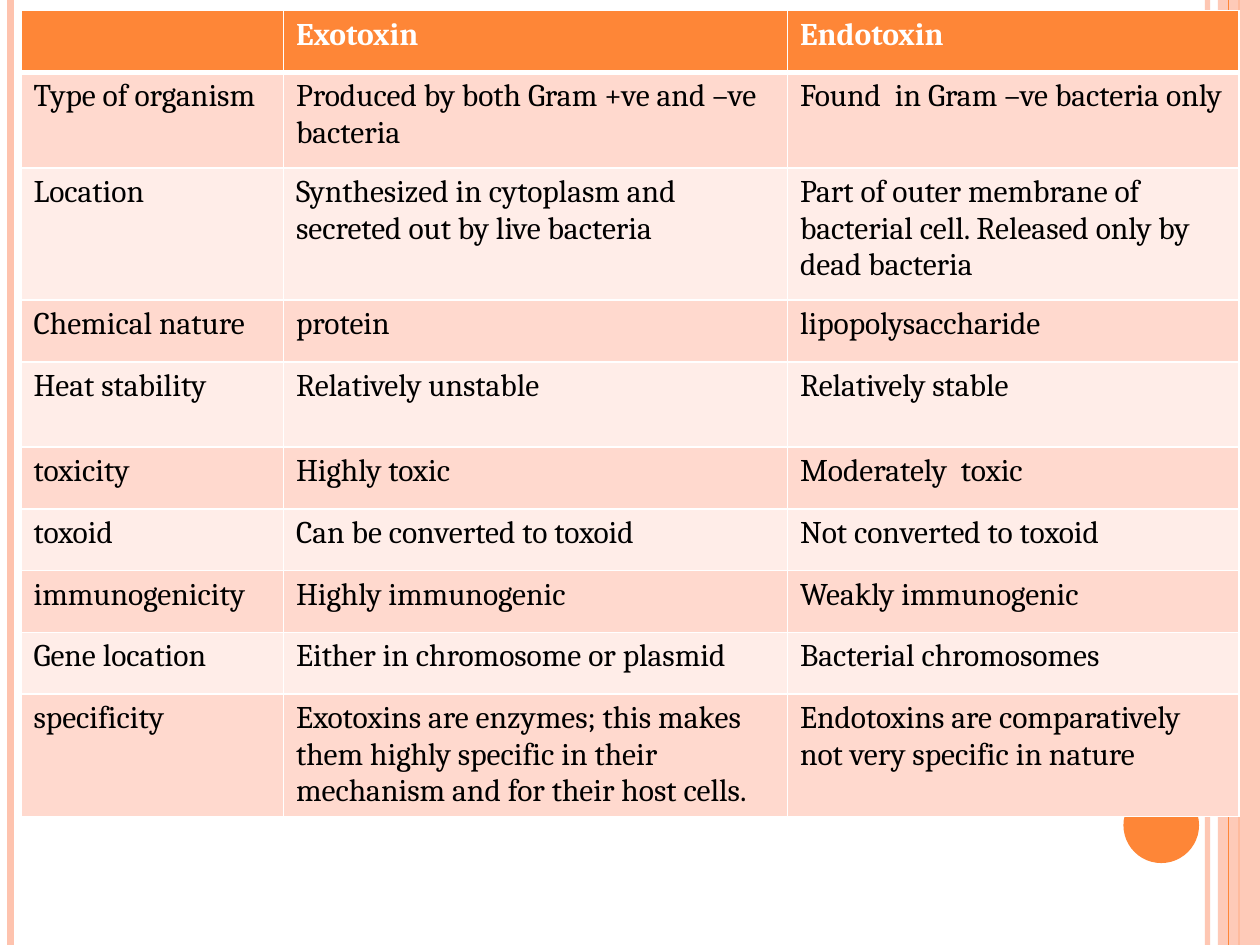
from lxml.etree import SubElement
from pptx import Presentation
from pptx.dml.color import RGBColor
from pptx.enum.shapes import MSO_CONNECTOR as CONN, MSO_SHAPE as SHAPE
from pptx.oxml.ns import qn
from pptx.util import Pt

ORANGE = RGBColor(0xFE, 0x86, 0x37)
PEACH = RGBColor(0xFE, 0xC3, 0xAE)
BAND_DARK = RGBColor(0xFF, 0xD9, 0xCE)
BAND_LIGHT = RGBColor(0xFF, 0xED, 0xE8)
WHITE = RGBColor(0xFF, 0xFF, 0xFF)
BLACK = RGBColor(0, 0, 0)
FONT = "Cambria"

COL_WIDTHS = [150, 288, 258]
ROW_HEIGHTS = [35.3, 54.7, 75.6, 35.3, 48.6, 35.3, 35.3, 35.3, 35.3, 70]
ROWS = [
    ("", "Exotoxin", "Endotoxin"),
    ("Type of organism", "Produced by both Gram +ve and –ve bacteria",
     "Found  in Gram –ve bacteria only"),
    ("Location", "Synthesized in cytoplasm and secreted out by live bacteria",
     "Part of outer membrane of bacterial cell. Released only by dead bacteria"),
    ("Chemical nature", "protein", "lipopolysaccharide"),
    ("Heat stability", "Relatively unstable", "Relatively stable"),
    ("toxicity", "Highly toxic", "Moderately  toxic"),
    ("toxoid", "Can be converted to toxoid", "Not converted to toxoid"),
    ("immunogenicity", "Highly immunogenic", "Weakly immunogenic"),
    ("Gene location", "Either in chromosome or plasmid", "Bacterial chromosomes"),
    ("specificity",
     "Exotoxins are enzymes; this makes them highly specific in their "
     "mechanism and for their host cells.",
     "Endotoxins are comparatively not very specific in nature"),
]


def write_text(tf, text, size=18, color=BLACK, bold=False):
    p = tf.paragraphs[0]
    p.font.size = Pt(size)
    if text:
        r = p.add_run()
        r.text = text
        r.font.name = FONT
        r.font.size = Pt(size)
        r.font.bold = bold
        r.font.color.rgb = color


def set_alpha(fill_parent, percent):
    clr = next(fill_parent.iter(qn("a:srgbClr")))
    SubElement(clr, qn("a:alpha"), val=str(percent * 1000))


def add_rule(s, x, top, height, color, width, alpha=100):
    line = s.shapes.add_connector(CONN.STRAIGHT, Pt(x), Pt(top), Pt(x), Pt(top + height))
    line.line.color.rgb = color
    line.line.width = Pt(width)
    if alpha < 100:
        set_alpha(line._element.spPr, alpha)
    SubElement(line._element.spPr, qn("a:effectLst"))


def add_solid(s, kind, left, top, width, height, color, alpha=100):
    sp = s.shapes.add_shape(kind, Pt(left), Pt(top), Pt(width), Pt(height))
    sp.shadow.inherit = False
    sp.fill.solid()
    sp.fill.fore_color.rgb = color
    sp.line.fill.background()
    if alpha < 100:
        set_alpha(sp._element.spPr, alpha)


def add_frame(s, left, top, width, height):
    right = left + width
    add_rule(s, right - 30, top, height, PEACH, 3, alpha=93)
    add_rule(s, left + 6, top, height, PEACH, 4.5)
    add_rule(s, right - 12, top, height, ORANGE, 1.5)
    add_solid(s, SHAPE.RECTANGLE, right - 24, top, 24, height, PEACH, alpha=87)
    add_rule(s, right - 18, top, height, ORANGE, 0.75)
    add_solid(s, SHAPE.OVAL, right - 78, top + height - 90, 43.2, 43.2, ORANGE)


def set_borders(cell, **widths):
    tc_pr = cell._tc.get_or_add_tcPr()
    for i, (side, width) in enumerate(widths.items()):
        ln = tc_pr.makeelement(qn(f"a:ln{side}"), {"w": str(Pt(width))})
        fill = SubElement(ln, qn("a:solidFill"))
        SubElement(fill, qn("a:srgbClr"), val=str(WHITE))
        tc_pr.insert(i, ln)


def add_comparison(s, left, top, width, height):
    table = s.shapes.add_table(len(ROWS), len(COL_WIDTHS), Pt(left), Pt(top),
                               Pt(width), Pt(height)).table
    for col, w in zip(table.columns, COL_WIDTHS):
        col.width = Pt(w)
    for i, (row, h, texts) in enumerate(zip(table.rows, ROW_HEIGHTS, ROWS)):
        row.height = Pt(h)
        header = i == 0
        fill = ORANGE if header else BAND_DARK if i % 2 else BAND_LIGHT
        for cell, text in zip(row.cells, texts):
            cell.fill.solid()
            cell.fill.fore_color.rgb = fill
            write_text(cell.text_frame, text, color=WHITE if header else BLACK,
                       bold=header)
            set_borders(cell, L=1, R=1, T=3 if i == 1 else 1, B=3 if header else 1)


def main():
    prs = Presentation()
    prs.slide_width, prs.slide_height = Pt(720), Pt(540)
    s = prs.slides.add_slide(prs.slide_layouts[6])
    add_frame(s, 0, 0, 720, 540)
    add_comparison(s, 12, 6, sum(COL_WIDTHS), sum(ROW_HEIGHTS))
    prs.save("out.pptx")


if __name__ == "__main__":
    main()
